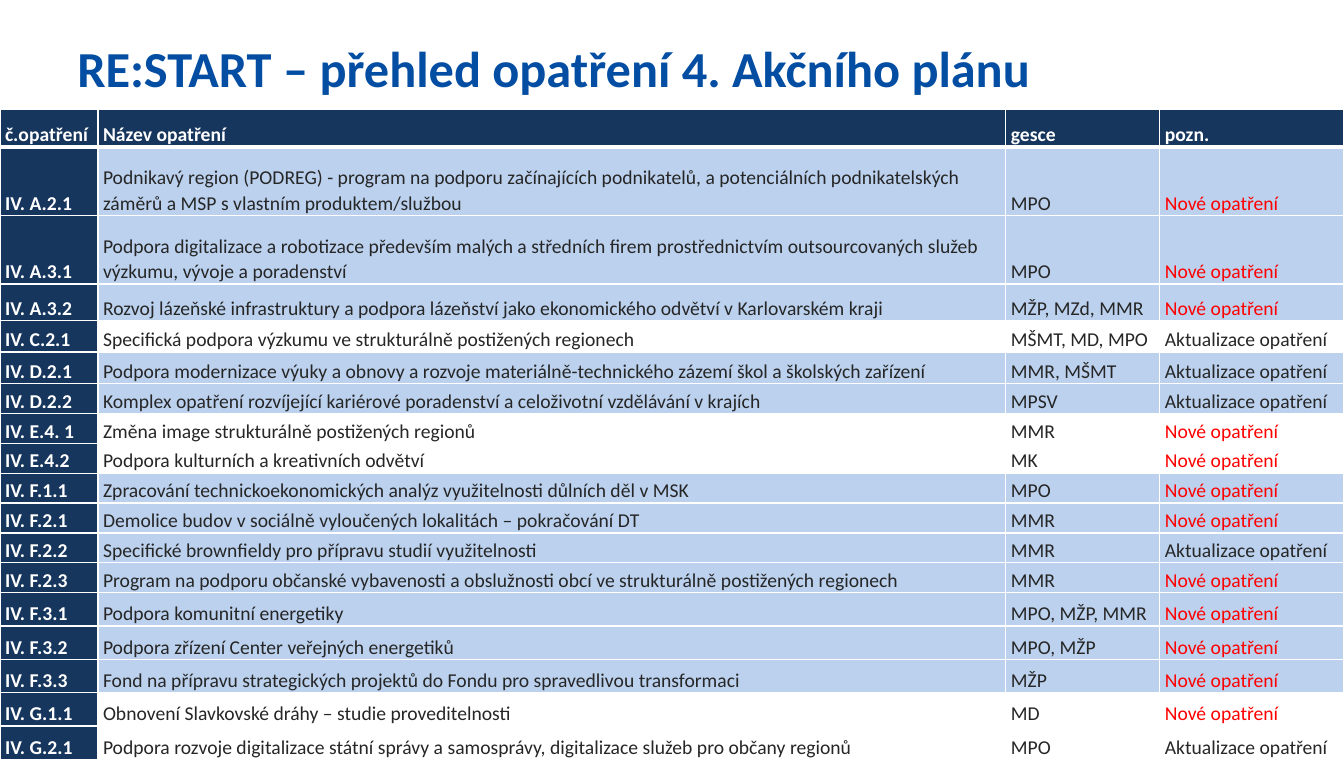
"""Build the overview slide of measures in the fourth RE:START action plan."""
from lxml import etree
from pptx import Presentation
from pptx.dml.color import RGBColor
from pptx.enum.text import MSO_ANCHOR
from pptx.oxml.ns import qn
from pptx.util import Pt

TOP, BOTTOM = MSO_ANCHOR.TOP, MSO_ANCHOR.BOTTOM
FONT = "Calibri"
NAVY, PALE, WHITE = "17365D", "BBD1EE", "FFFFFF"
BLUE, DARK, RED = "034EA2", "262626", "FF0000"
NEW, UPDATE = "Nové opatření", "Aktualizace opatření"

TITLE = "RE:START – přehled opatření 4. Akčního plánu"
HEADER = ("č.opatření", "Název opatření", "gesce", "pozn.")
MEASURES = [
    ("IV. A.2.1", "Podnikavý region (PODREG) - program na podporu začínajících podnikatelů, "
     "a potenciálních podnikatelských záměrů a MSP s vlastním produktem/službou", "MPO", NEW),
    ("IV. A.3.1", "Podpora digitalizace a robotizace především malých a středních firem "
     "prostřednictvím outsourcovaných služeb výzkumu, vývoje a poradenství", "MPO", NEW),
    ("IV. A.3.2", "Rozvoj lázeňské infrastruktury a podpora lázeňství jako ekonomického "
     "odvětví v Karlovarském kraji", "MŽP, MZd, MMR", NEW),
    ("IV. C.2.1", "Specifická podpora výzkumu ve strukturálně postižených regionech",
     "MŠMT, MD, MPO", UPDATE),
    ("IV. D.2.1", "Podpora modernizace výuky a obnovy a rozvoje materiálně-technického "
     "zázemí škol a školských zařízení", "MMR, MŠMT", UPDATE),
    ("IV. D.2.2", "Komplex opatření rozvíjející kariérové poradenství a celoživotní "
     "vzdělávání v krajích", "MPSV", UPDATE),
    ("IV. E.4. 1", "Změna image strukturálně postižených regionů", "MMR", NEW),
    ("IV. E.4.2", "Podpora kulturních a kreativních odvětví", "MK", NEW),
    ("IV. F.1.1", "Zpracování technickoekonomických analýz využitelnosti důlních děl v MSK",
     "MPO", NEW),
    ("IV. F.2.1", "Demolice budov v sociálně vyloučených lokalitách – pokračování DT",
     "MMR", NEW),
    ("IV. F.2.2", "Specifické brownfieldy pro přípravu studií využitelnosti", "MMR", UPDATE),
    ("IV. F.2.3", "Program na podporu občanské vybavenosti a obslužnosti obcí ve "
     "strukturálně postižených regionech", "MMR", NEW),
    ("IV. F.3.1", "Podpora komunitní energetiky", "MPO, MŽP, MMR", NEW),
    ("IV. F.3.2", "Podpora zřízení Center veřejných energetiků", "MPO, MŽP", NEW),
    ("IV. F.3.3", "Fond na přípravu strategických projektů do Fondu pro spravedlivou "
     "transformaci", "MŽP", NEW),
    ("IV. G.1.1", "Obnovení Slavkovské dráhy – studie proveditelnosti", "MD", NEW),
    ("IV. G.2.1", "Podpora rozvoje digitalizace státní správy a samosprávy, digitalizace "
     "služeb pro občany regionů", "MPO", UPDATE),
]
SHADED_AREAS = "ADF"
COLUMN_WIDTHS = [70, 648.5, 110, 131.5]
ROW_HEIGHTS = [27, 49, 49, 26, 22.5, 22.5] + [21.4] * 7 + [23.8] * 5


def color(value):
    return RGBColor.from_string(value)


def write(frame, text, size=14, ink=DARK, bold=False, spacing=1.07):
    para = frame.paragraphs[0]
    para.line_spacing = spacing
    span = para.add_run()
    span.text = text
    span.font.name, span.font.size, span.font.bold = FONT, Pt(size), bold
    span.font.color.rgb = color(ink)


def add_borders(cell, bottom):
    properties = cell._tc.get_or_add_tcPr()
    for side, width in (("lnL", 1), ("lnR", 1), ("lnT", 1), ("lnB", bottom)):
        line = etree.SubElement(properties, qn("a:" + side), w=str(Pt(width)))
        fill = etree.SubElement(line, qn("a:solidFill"))
        etree.SubElement(fill, qn("a:srgbClr"), val=WHITE)


def format_cell(cell, text, fill, ink, bold, bottom):
    add_borders(cell, bottom)
    cell.fill.solid()
    cell.fill.fore_color.rgb = color(fill)
    cell.vertical_anchor = BOTTOM
    cell.margin_left = cell.margin_right = Pt(3.6)
    cell.margin_top = cell.margin_bottom = Pt(0)
    write(cell.text_frame, text, ink=ink, bold=bold)


def add_title(page):
    title = page.shapes.title
    title.left, title.top, title.width, title.height = Pt(48), Pt(21.6), Pt(864), Pt(73)
    frame = title.text_frame
    frame.vertical_anchor = TOP
    frame.margin_top = Pt(5)
    write(frame, TITLE, size=36, ink=BLUE, bold=True, spacing=1.0)
    frame.paragraphs[0].alignment = 1


def add_measures(page):
    rows = [HEADER] + MEASURES
    table = page.shapes.add_table(len(rows), len(HEADER), Pt(0), Pt(78),
                                  Pt(sum(COLUMN_WIDTHS)), Pt(sum(ROW_HEIGHTS))).table
    for column, width in zip(table.columns, COLUMN_WIDTHS):
        column.width = Pt(width)
    for row, height in zip(table.rows, ROW_HEIGHTS):
        row.height = Pt(height)
    for row_index, values in enumerate(rows):
        is_header = row_index == 0
        area = values[0].split()[-1][0] if is_header else values[0][4]
        body_fill = PALE if area in SHADED_AREAS else WHITE
        for column_index, text in enumerate(values):
            strong = is_header or column_index == 0
            ink = WHITE if strong else RED if text == NEW else DARK
            format_cell(table.cell(row_index, column_index), text,
                        NAVY if strong else body_fill, ink, strong, 3 if is_header else 1)


def main():
    deck = Presentation()
    deck.slide_width, deck.slide_height = Pt(960), Pt(553)
    page = deck.slides.add_slide(deck.slide_layouts[5])
    add_title(page)
    add_measures(page)
    deck.save("out.pptx")


if __name__ == "__main__":
    main()
